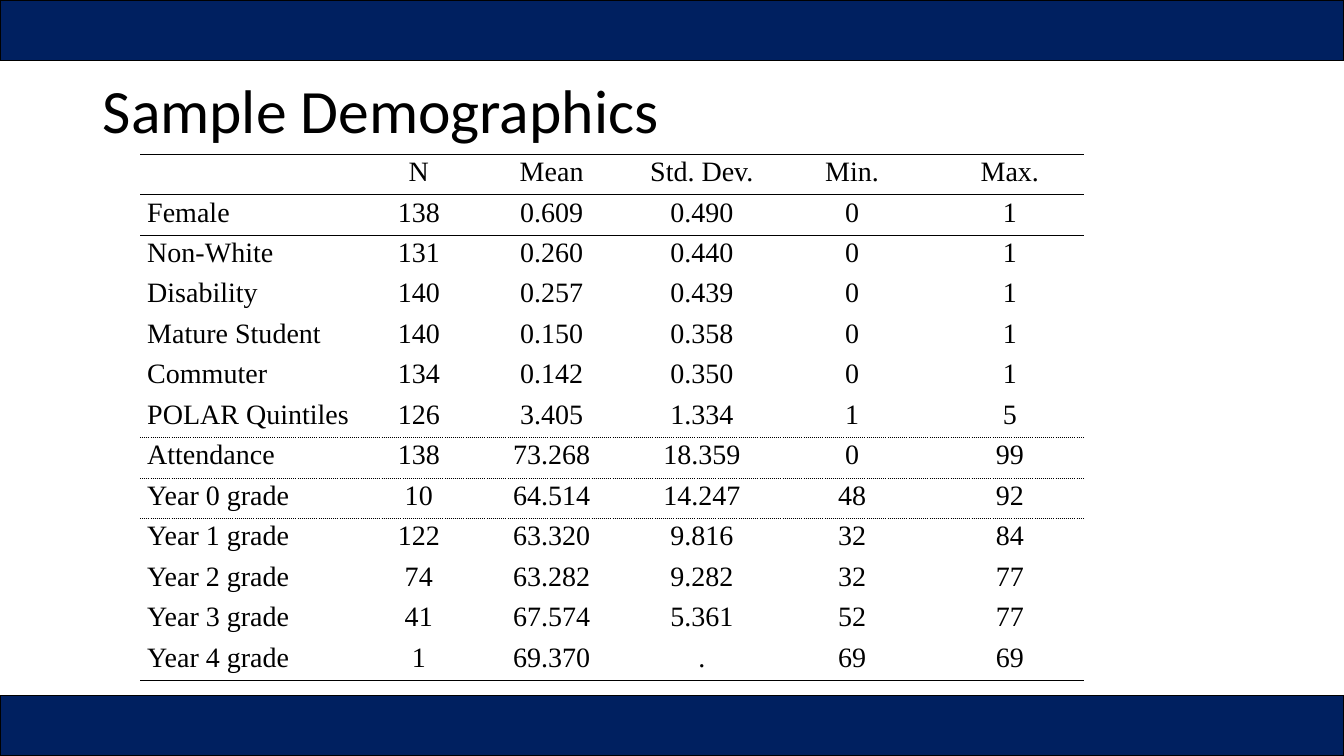
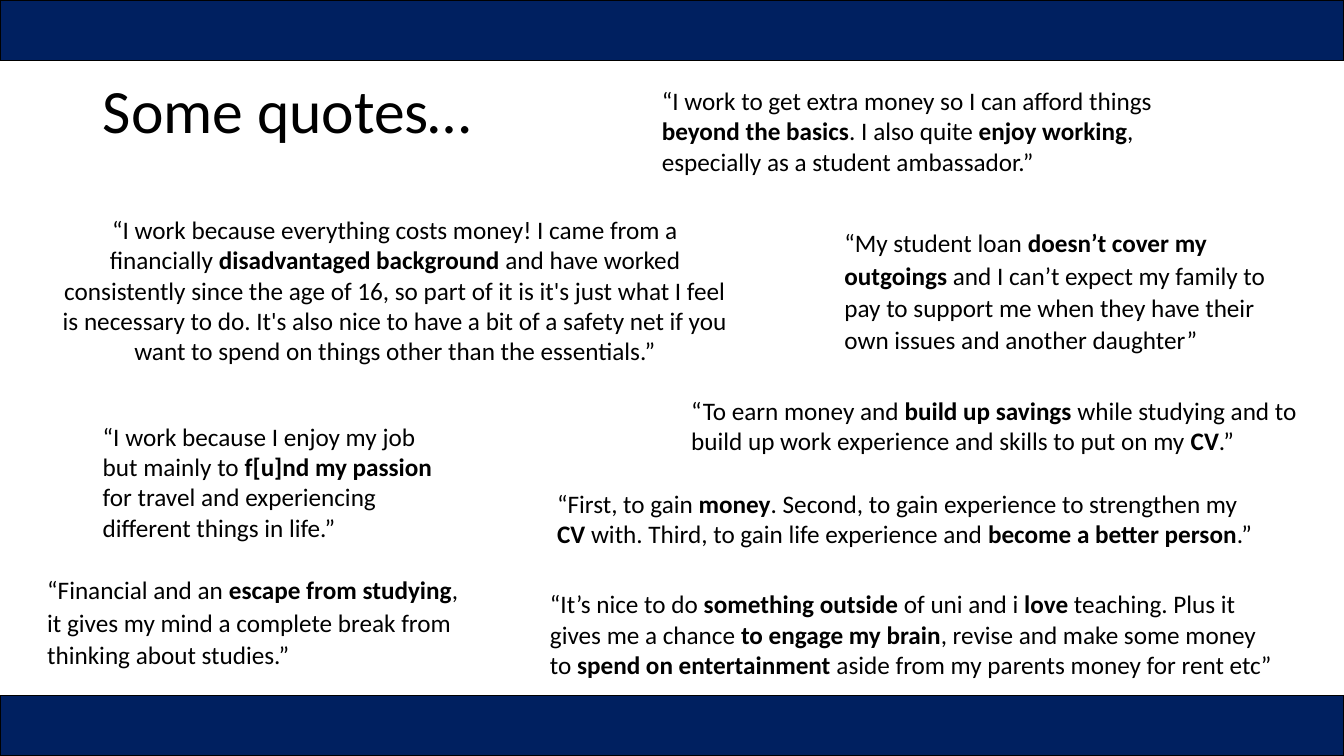
"""Build two slides: a demographics table and a page of student quotes."""
from lxml.etree import SubElement
from pptx import Presentation
from pptx.dml.color import RGBColor
from pptx.enum.shapes import MSO_SHAPE
from pptx.enum.text import MSO_ANCHOR, MSO_AUTO_SIZE, PP_ALIGN
from pptx.oxml.ns import qn
from pptx.util import Cm, Pt

NAVY = RGBColor(0x00, 0x20, 0x60)
BLACK = RGBColor(0, 0, 0)
SANS, SERIF = "Calibri", "Times New Roman"
WIDE, HIGH, BAND = 33.87, 19.05, 1.52
PLAIN = "{2D5ABB26-0587-4C30-8999-92F81FD0307C}"

HEAD = ["", "N", "Mean", "Std. Dev.", "Min.", "Max."]
ROWS = [
    HEAD,
    ["Female", "138", "0.609", "0.490", "0", "1"],
    ["Non-White", "131", "0.260", "0.440", "0", "1"],
    ["Disability", "140", "0.257", "0.439", "0", "1"],
    ["Mature Student", "140", "0.150", "0.358", "0", "1"],
    ["Commuter", "134", "0.142", "0.350", "0", "1"],
    ["POLAR Quintiles", "126", "3.405", "1.334", "1", "5"],
    ["Attendance", "138", "73.268", "18.359", "0", "99"],
    ["Year 0 grade", "10", "64.514", "14.247", "48", "92"],
    ["Year 1 grade", "122", "63.320", "9.816", "32", "84"],
    ["Year 2 grade", "74", "63.282", "9.282", "32", "77"],
    ["Year 3 grade", "41", "67.574", "5.361", "52", "77"],
    ["Year 4 grade", "1", "69.370", ".", "69", "69"],
]
COLS = [5.77, 2.51, 4.19, 3.38, 4.19, 3.76]
ROW = 1.02
RULES = {0: "solid", 1: "solid", 7: "sysDot", 8: "sysDot", len(ROWS): "solid"}

# Asterisks enclose the bold words; the flags are centred and loose.
QUOTES = [
    ((1.27, 5.28, 17.37, 4.11), True, False,
     "“I work because everything costs money! I came from a financially "
     "*disadvantaged background *and have worked consistently since the age "
     "of 16, so part of it is it's just what I feel is necessary to do. It's "
     "also nice to have a bit of a safety net if you want to spend on things "
     "other than the essentials.”"),
    ((2.34, 10.49, 8.99, 4.11), False, False,
     "“I work because I enjoy my job but mainly to *f[u]nd my passion *for "
     "travel and experiencing different things in life.”"),
    ((21.03, 5.56, 11.3, 3.51), False, True,
     "“My student loan *doesn’t cover my outgoings* and I can’t expect my "
     "family to pay to support me when they have their own issues and "
     "another daughter”"),
    ((13.61, 14.71, 18.97, 2.57), False, False,
     "“It’s nice to do *something outside *of uni and i *love* teaching. "
     "Plus it gives me a chance *to engage my brain*, revise and make some "
     "money to *spend on entertainment *aside from my parents money for "
     "rent etc”"),
    ((13.79, 12.17, 18.24, 1.8), False, False,
     "“First, to gain *money*. Second, to gain experience to strengthen my "
     "*CV* with. Third, to gain life experience and *become a better "
     "person*.”"),
    ((16.43, 2.03, 13.34, 2.57), False, False,
     "“I work to get extra money so I can afford things *beyond the basics*. "
     "I also quite *enjoy working*, especially as a student ambassador.”"),
    ((0.94, 14.3, 11.13, 2.69), False, True,
     "“Financial and an *escape from studying*, it gives my mind a complete "
     "break from thinking about studies.”"),
    ((17.17, 9.83, 16.69, 1.8), False, False,
     "“To earn money and *build up savings *while studying and to build up "
     "work experience and skills to put on my *CV*.”"),
]


def style(run, size, face, bold=False):
    font = run.font
    font.size, font.name, font.bold = Pt(size), face, bold
    font.color.rgb = BLACK


def loosen(para):
    para.line_spacing, para.space_after = 1.07, Pt(8)


def add_box(slide, place):
    box = slide.shapes.add_textbox(*map(Cm, place))
    box.text_frame.word_wrap = True
    return box.text_frame


def add_page(deck, title):
    slide = deck.slides.add_slide(deck.slide_layouts[6])
    for top in (0, HIGH - BAND):
        band = slide.shapes.add_shape(
            MSO_SHAPE.RECTANGLE, 0, Cm(top), Cm(WIDE), Cm(BAND))
        band.shadow.inherit = False
        band.fill.solid()
        band.fill.fore_color.rgb = NAVY
        band.line.color.rgb = BLACK
        band.line.width = Pt(1)
    frame = add_box(slide, (2.34, 1.02, 29.21, 3.68))
    frame.vertical_anchor = MSO_ANCHOR.MIDDLE
    frame.text = title
    para = frame.paragraphs[0]
    para.line_spacing = 0.9
    style(para.runs[0], 44, SANS)
    return slide


def add_rule(cell, side, dash):
    line = SubElement(cell._tc.get_or_add_tcPr(), qn(side), w=str(Pt(1)))
    fill = SubElement(line, qn("a:solidFill"))
    SubElement(fill, qn("a:srgbClr"), val=str(BLACK))
    SubElement(line, qn("a:prstDash"), val=dash)


def fill_cell(cell, text, row, col):
    cell.margin_left = cell.margin_right = Cm(0.18)
    cell.margin_top = cell.margin_bottom = 0
    cell.text = text
    para = cell.text_frame.paragraphs[0]
    para.alignment = PP_ALIGN.CENTER if col else PP_ALIGN.LEFT
    loosen(para)
    for run in para.runs:
        style(run, 20, SERIF)
    for side, edge in (("a:lnT", row), ("a:lnB", row + 1)):
        if edge in RULES:
            add_rule(cell, side, RULES[edge])
    cell.fill.background()


def add_grid(slide):
    frame = slide.shapes.add_table(
        len(ROWS), len(COLS), Cm(3.53), Cm(3.89),
        Cm(sum(COLS)), Cm(ROW * len(ROWS)))
    grid = frame.table
    grid.first_row = grid.horz_banding = False
    for node in frame._element.iter(qn("a:tableStyleId")):
        node.text = PLAIN
    for col, width in zip(grid.columns, COLS):
        col.width = Cm(width)
    for r, texts in enumerate(ROWS):
        grid.rows[r].height = Cm(ROW)
        for c, text in enumerate(texts):
            fill_cell(grid.cell(r, c), text, r, c)


def add_quote(slide, place, centred, loose, text):
    frame = add_box(slide, place)
    frame.auto_size = MSO_AUTO_SIZE.SHAPE_TO_FIT_TEXT
    para = frame.paragraphs[0]
    para.alignment = PP_ALIGN.CENTER if centred else PP_ALIGN.LEFT
    if loose:
        loosen(para)
    for i, part in enumerate(text.split("*")):
        run = para.add_run()
        run.text = part
        style(run, 18, SANS, i % 2 == 1)


def main():
    deck = Presentation()
    deck.slide_width, deck.slide_height = Cm(WIDE), Cm(HIGH)
    add_grid(add_page(deck, "Sample Demographics"))
    page = add_page(deck, "Some quotes…")
    for quote in QUOTES:
        add_quote(page, *quote)
    deck.save("out.pptx")


if __name__ == "__main__":
    main()
